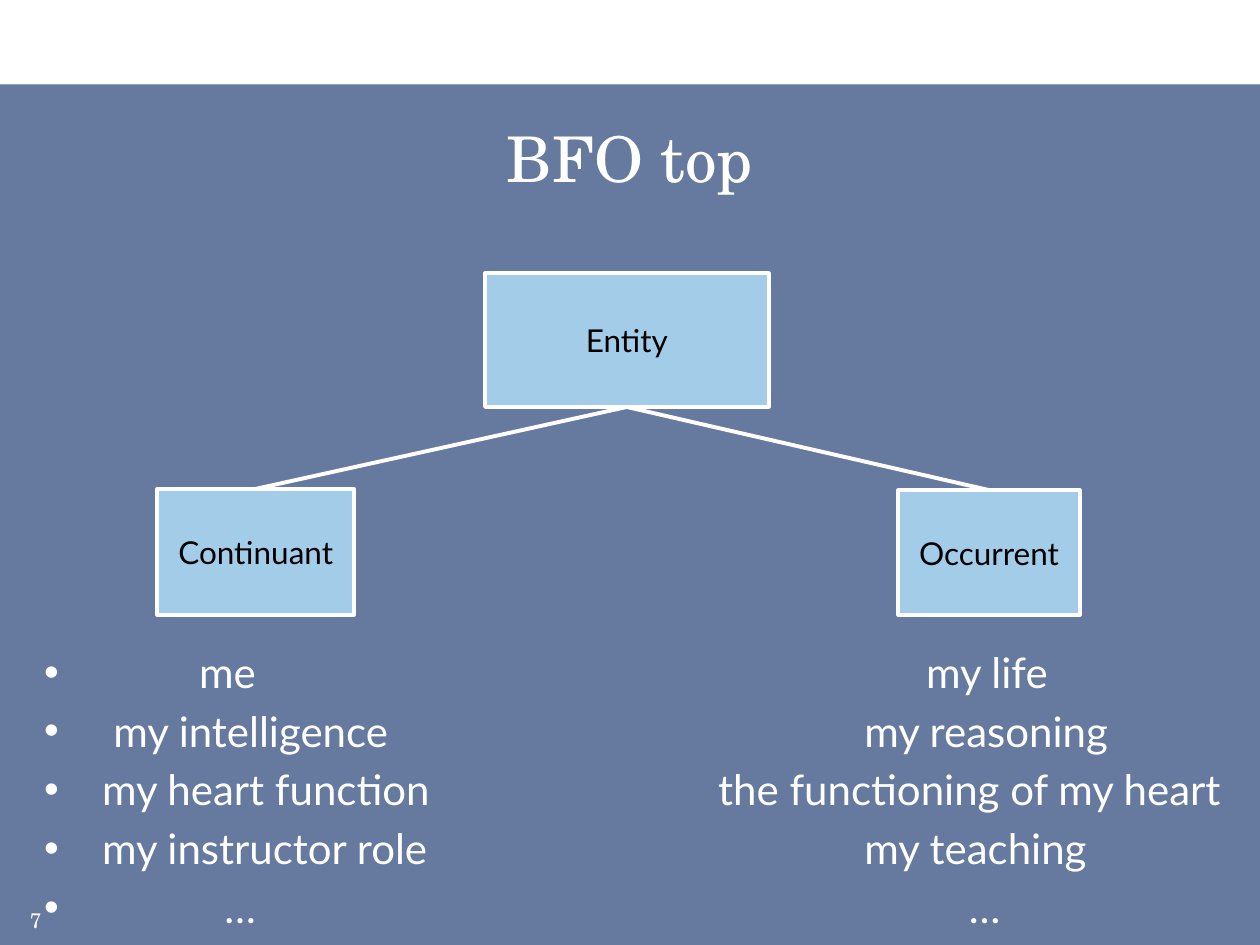
from lxml.etree import SubElement
from pptx import Presentation
from pptx.dml.color import RGBColor
from pptx.enum.shapes import MSO_CONNECTOR as Connector, MSO_SHAPE as Shape
from pptx.enum.text import MSO_ANCHOR as Anchor, MSO_AUTO_SIZE as AutoSize, PP_ALIGN as Align
from pptx.oxml.ns import qn
from pptx.util import Inches, Pt

WHITE = RGBColor(0xFF, 0xFF, 0xFF)
BLACK = RGBColor(0x00, 0x00, 0x00)
NAVY = RGBColor(0x00, 0x20, 0x60)
SKY = RGBColor(0xA2, 0xCC, 0xE8)

TITLE_FONT = {"name": "TeX Gyre Schola", "size": Pt(36)}
LIST_FONT = {"name": "Lato", "size": Pt(24)}
NODE_FONT = {"name": "Lato", "size": Pt(18)}
NUMBER_FONT = {"name": "TeX Gyre Schola", "size": Pt(12)}

EXAMPLES = [
    ("me", 1.23, "my life", 7.0),
    ("my intelligence", 0.55, "my reasoning", 6.51),
    ("my heart function", 0.46, "the functioning of my heart", 5.35),
    ("my instructor role", 0.46, "my teaching", 6.51),
    ("…", 1.43, "…", 7.34),
]


class TreeSlide:
    """Draws a titled class tree with examples in one consistent style."""

    def __init__(self, slide):
        self.slide = slide
        self.shapes = slide.shapes

    def place(self, item, box):
        for side, length in zip(("left", "top", "width", "height"), box):
            setattr(item, side, Inches(length))

    def style(self, paragraph, font, color=WHITE, align=Align.CENTER):
        paragraph.alignment = align
        for key, value in font.items():
            setattr(paragraph.font, key, value)
        paragraph.font.color.rgb = color

    def rectangle(self, box, fill):
        rectangle = self.shapes.add_shape(Shape.RECTANGLE, *map(Inches, box))
        rectangle.shadow.inherit = False
        rectangle.fill.solid()
        rectangle.fill.fore_color.rgb = fill
        return rectangle

    def backdrop(self, box, opacity):
        backdrop = self.rectangle(box, NAVY)
        backdrop.line.fill.background()
        color = backdrop.element.spPr.find(".//" + qn("a:srgbClr"))
        SubElement(color, qn("a:alpha"), val=str(opacity * 1000))
        self.shapes.element.insert(2, backdrop.element)

    def title(self, text, box):
        title = self.shapes.title
        self.place(title, box)
        title.text_frame.text = text
        title.text_frame.auto_size = AutoSize.NONE
        self.style(title.text_frame.paragraphs[0], TITLE_FONT)

    def examples(self, rows, box):
        body = self.slide.placeholders[1]
        self.place(body, box)
        frame = body.text_frame
        frame.text = "\n".join(f"\t{left}\t{right}" for left, _, right, _ in rows)
        frame.auto_size = AutoSize.NONE
        for index, (row, paragraph) in enumerate(zip(rows, frame.paragraphs)):
            layout = paragraph._p.get_or_add_pPr()
            layout.set("marL", str(Inches(0.38)))
            layout.set("indent", str(Inches(-0.38)))
            bullet_color = SubElement(layout, qn("a:buClr"))
            SubElement(bullet_color, qn("a:srgbClr"), val=str(WHITE))
            SubElement(layout, qn("a:buChar"), char="•")
            tabs = SubElement(layout, qn("a:tabLst"))
            for stop in (row[1], row[3]):
                SubElement(tabs, qn("a:tab"), pos=str(Inches(stop)), algn="l")
            paragraph.space_before = Pt(4.8 if index else 0)
            self.style(paragraph, LIST_FONT, align=Align.LEFT)

    def number(self, text, box):
        frame = self.shapes.add_textbox(*map(Inches, box)).text_frame
        margins = dict.fromkeys(
            ("margin_left", "margin_top", "margin_right", "margin_bottom"), 0
        )
        settings = {"text": text, "word_wrap": True, "vertical_anchor": Anchor.BOTTOM}
        for key, value in {**settings, **margins}.items():
            setattr(frame, key, value)
        self.style(frame.paragraphs[0], NUMBER_FONT, align=Align.RIGHT)

    def node(self, text, box):
        node = self.rectangle(box, SKY)
        node.line.color.rgb = WHITE
        node.line.width = Pt(2.25)
        frame = node.text_frame
        frame.text = text
        frame.word_wrap = False
        frame.vertical_anchor = Anchor.MIDDLE
        self.style(frame.paragraphs[0], NODE_FONT, BLACK)
        return node

    def branch(self, parent, child):
        branch = self.shapes.add_connector(Connector.STRAIGHT, 0, 0, 0, 0)
        branch.begin_connect(parent, 2)
        branch.end_connect(child, 0)
        branch.line.color.rgb = WHITE
        branch.line.width = Pt(2.25)
        SubElement(branch.element.spPr, qn("a:effectLst"))


def main():
    deck = Presentation()
    deck.slide_width, deck.slide_height = Inches(10), Inches(7.5)
    tree = TreeSlide(deck.slides.add_slide(deck.slide_layouts[1]))
    tree.backdrop((0, 0.67, 10, 6.83), opacity=60)
    tree.title("BFO top", (0.25, 0.83, 9.5, 0.83))
    tree.examples(EXAMPLES, (0.25, 5.08, 9.83, 2.17))
    tree.number("7", (0, 7.08, 0.33, 0.32))
    entity = tree.node("Entity", (3.85, 2.17, 2.25, 1.06))
    continuant = tree.node("Continuant", (1.25, 3.88, 1.56, 1))
    occurrent = tree.node("Occurrent", (7.13, 3.89, 1.44, 0.99))
    for child in (continuant, occurrent):
        tree.branch(entity, child)
    deck.save("out.pptx")


if __name__ == "__main__":
    main()
